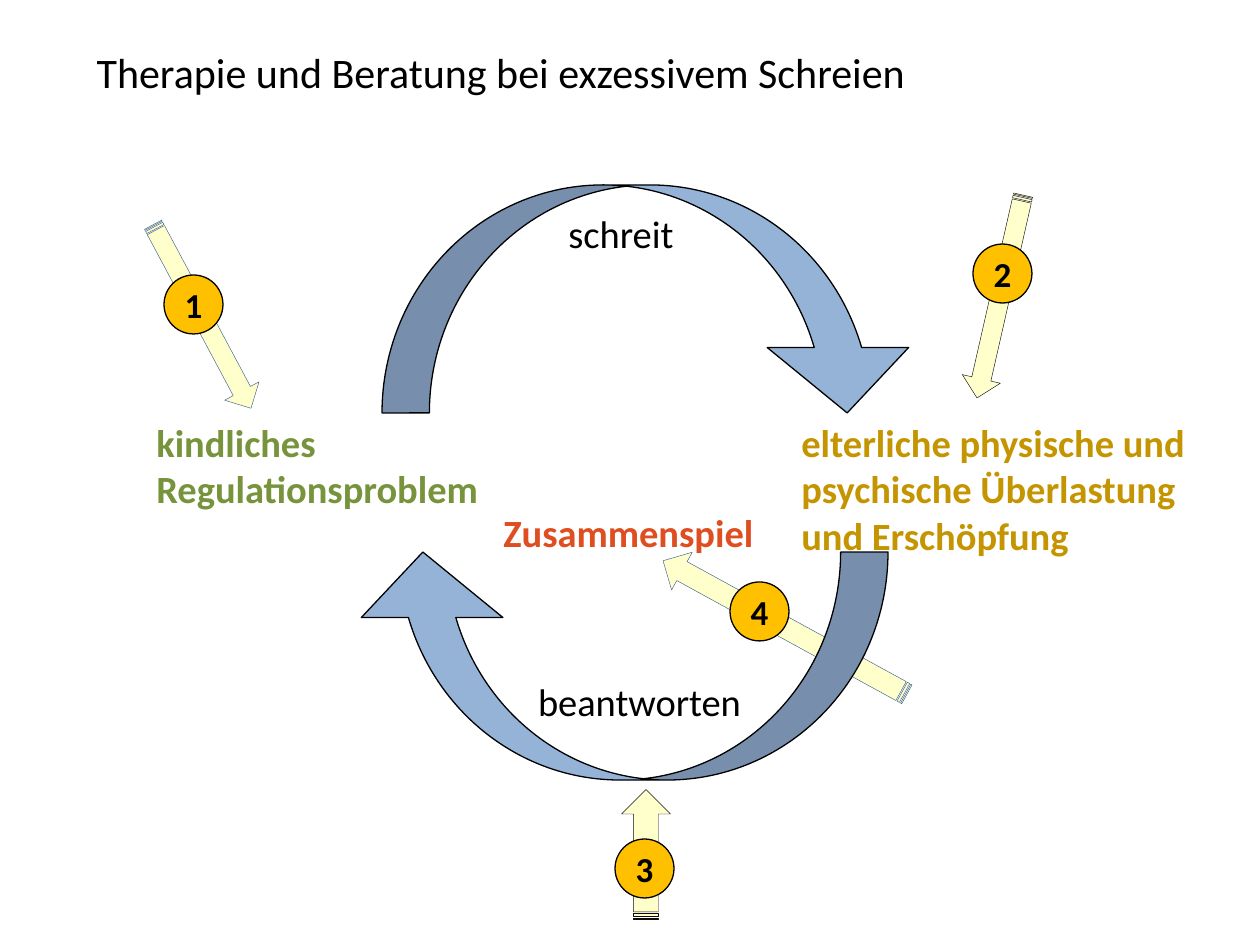
from pptx import Presentation
from pptx.dml.color import RGBColor
from pptx.enum.shapes import MSO_SHAPE
from pptx.enum.text import MSO_ANCHOR, MSO_AUTO_SIZE, PP_ALIGN
from pptx.util import Emu, Pt

PX = 914400 / 126
FONT = "Calibri"
BLACK, BLUE, YELLOW, AMBER = "000000", "95B3D7", "FFFFCC", "FFC000"
STEEL, DARK = "3A5F8C", "0D0D0D"
DISC = 59

# Content: boxes are left, top, width, height in px
TITLE = ("Therapie und Beratung bei exzessivem Schreien", (84, 40, 932, 63))
CYCLE = [((352, 552, 536, 228), 180), ((382, 185, 536, 228), 0)]
CYCLE_ADJ = (0.208, 0.621, 0.287)
# number, arrow box, rotation, arrow line, left and top of the disc
STEPS = [
    ("1", (98, 297, 208, 39), 61.9, STEEL, (164, 275)),
    ("2", (896, 277, 208, 39), 102.8, DARK, (973, 244)),
    ("3", (581, 830, 130, 49), 270, DARK, (615, 839)),
    ("4", (646, 606, 278, 43), 208.7, STEEL, (730, 582)),
]
# text, box, colour, bold, alignment
LABELS = [
    ("Zusammenspiel", (491, 503, 277, 59), "DF4E21", True, PP_ALIGN.LEFT),
    ("schreit", (512, 204, 218, 59), BLACK, False, PP_ALIGN.CENTER),
    ("beantworten", (491, 672, 297, 59), BLACK, False, PP_ALIGN.CENTER),
    ("kindliches Regulationsproblem", (144, 413, 486, 106),
     "77933C", True, PP_ALIGN.LEFT),
    ("elterliche physische und psychische Überlastung und Erschöpfung",
     (789, 413, 436, 152), "C49500", True, PP_ALIGN.LEFT),
]


def px(*values):
    return [Emu(round(v * PX)) for v in values]


def rgb(value):
    return RGBColor.from_string(value)


def add_shape(kind, box, fill, line, width, rotation=0):
    sp = s.shapes.add_shape(kind, *px(*box))
    sp.shadow.inherit = False
    sp.rotation = rotation
    sp.fill.solid()
    sp.fill.fore_color.rgb = rgb(fill)
    sp.line.color.rgb = rgb(line)
    sp.line.width = Pt(width)
    return sp


def write(sp, text, size, color=BLACK, bold=False, align=PP_ALIGN.LEFT,
          anchor=MSO_ANCHOR.TOP, wrap=True):
    tf = sp.text_frame
    tf.word_wrap = wrap
    tf.vertical_anchor = anchor
    p = tf.paragraphs[0]
    p.alignment = align
    r = p.add_run()
    r.text = text
    r.font.name, r.font.size, r.font.bold = FONT, Pt(size), bold
    r.font.color.rgb = rgb(color)
    return tf


prs = Presentation()
prs.slide_width, prs.slide_height = px(1260, 945)
s = prs.slides.add_slide(prs.slide_layouts[5])

# Title
title = s.shapes.title
title.left, title.top, title.width, title.height = px(*TITLE[1])
write(title, TITLE[0], 24).auto_size = MSO_AUTO_SIZE.NONE

# Striped arrows, the last one lying behind the cycle
for number, box, rotation, line, disc in reversed(STEPS):
    add_shape(MSO_SHAPE.STRIPED_RIGHT_ARROW, box, YELLOW, line, 0.25, rotation)

# Cycle of two curved arrows
for box, rotation in CYCLE:
    sp = add_shape(MSO_SHAPE.CURVED_DOWN_ARROW, box, BLUE, BLACK, 0.75, rotation)
    for i, value in enumerate(CYCLE_ADJ):
        sp.adjustments[i] = value

# Numbered discs
for number, box, rotation, line, disc in STEPS:
    sp = add_shape(MSO_SHAPE.OVAL, (*disc, DISC, DISC), AMBER, BLACK, 0.75)
    write(sp, number, 20, bold=True, align=PP_ALIGN.CENTER,
          anchor=MSO_ANCHOR.MIDDLE, wrap=False)

# Labels
for text, box, color, bold, align in LABELS:
    tb = s.shapes.add_textbox(*px(*box))
    tf = write(tb, text, 22, color, bold, align)
    tf.auto_size = MSO_AUTO_SIZE.SHAPE_TO_FIT_TEXT

prs.save("out.pptx")
